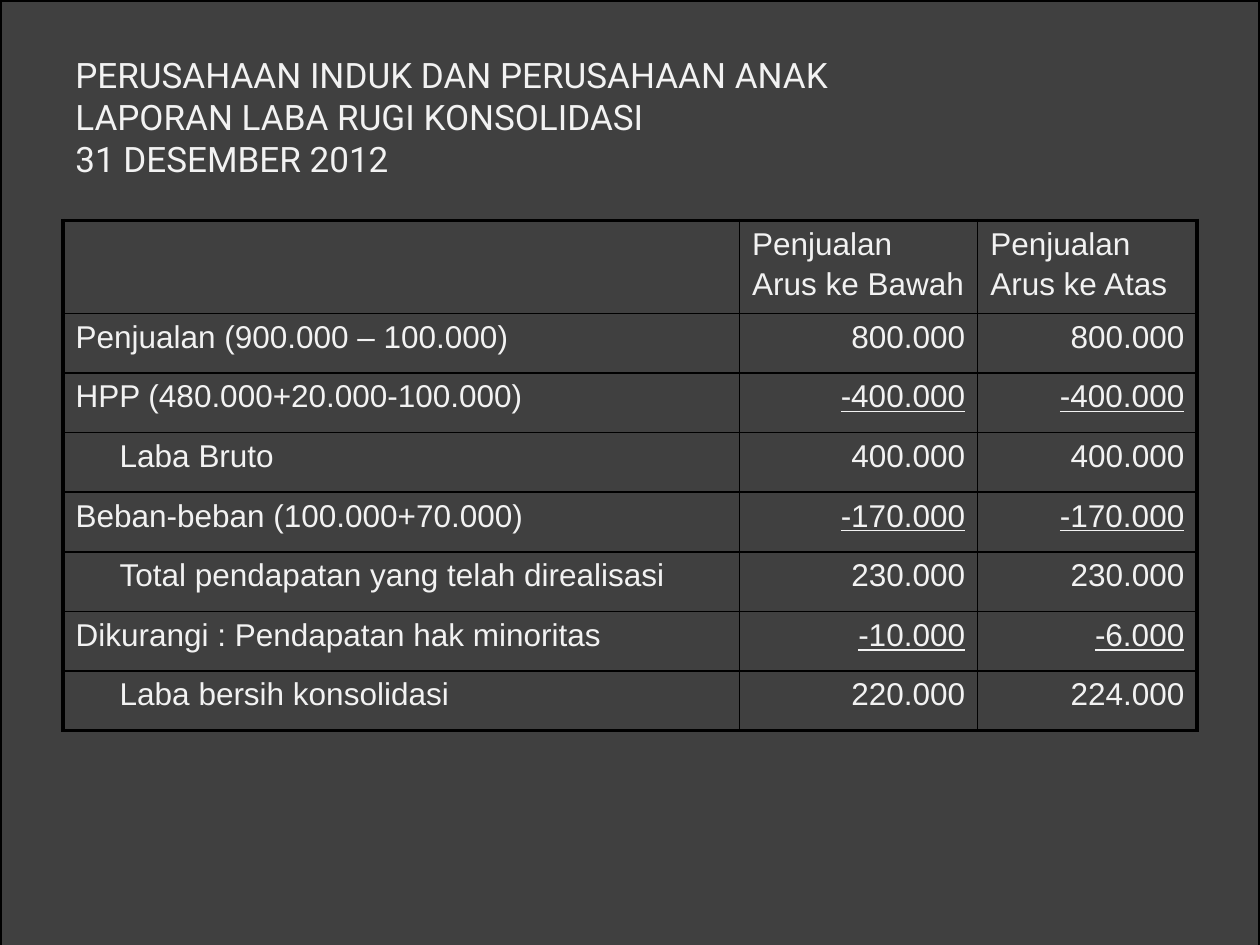
from dataclasses import dataclass

from lxml import etree
from pptx import Presentation
from pptx.dml.color import RGBColor
from pptx.enum.shapes import MSO_SHAPE
from pptx.enum.text import MSO_ANCHOR, PP_ALIGN
from pptx.oxml.ns import qn
from pptx.util import Inches, Pt

RECT = MSO_SHAPE.RECTANGLE
MIDDLE = MSO_ANCHOR.MIDDLE
LEFT, RIGHT = PP_ALIGN.LEFT, PP_ALIGN.RIGHT


@dataclass(frozen=True)
class Theme:
    back: str = "404040"
    ink: str = "F2F2F2"
    line: str = "000000"
    head_font: str = "Roboto"
    body_font: str = "Arial"
    head_size: float = 20
    body_size: float = 18
    gap: float = 2.7
    thin: float = 1
    thick: float = 2.25


@dataclass(frozen=True)
class Entry:
    label: str
    down: str
    up: str
    total: bool = False
    under: bool = False


THEME = Theme()
WIDE, HIGH = Inches(10), Inches(7.5)
EDGE = 0.05
SPAN = 1 - 2 * EDGE
COLS = (5.37, 1.89, 1.74)
HEAD_ROW, BODY_ROW = 0.71, 0.473
INDENT = 0.45

TITLE = "\v".join((
    "PERUSAHAAN INDUK DAN PERUSAHAAN ANAK",
    "LAPORAN LABA RUGI KONSOLIDASI",
    "31 DESEMBER 2012",
))
HEADS = ("", "Penjualan\nArus ke Bawah", "Penjualan\nArus ke Atas")
ENTRIES = (
    Entry("Penjualan (900.000 – 100.000)", "800.000", "800.000"),
    Entry("HPP (480.000+20.000-100.000)", "-400.000", "-400.000", under=True),
    Entry("Laba Bruto", "400.000", "400.000", total=True),
    Entry("Beban-beban (100.000+70.000)", "-170.000", "-170.000", under=True),
    Entry("Total pendapatan yang telah direalisasi", "230.000", "230.000", total=True),
    Entry("Dikurangi : Pendapatan hak minoritas", "-10.000", "-6.000", under=True),
    Entry("Laba bersih konsolidasi", "220.000", "224.000", total=True),
)


def write(frame, text: str, font: str, size: float, align=LEFT, under: bool = False) -> None:
    frame.text = text
    look = {"name": font, "size": Pt(size), "underline": under}
    for spot, para in enumerate(frame.paragraphs):
        para.alignment = align
        if spot:
            para.space_before = Pt(THEME.gap)
        for part in para.runs:
            for key, value in look.items():
                setattr(part.font, key, value)
            part.font.color.rgb = RGBColor.from_string(THEME.ink)


def rule(cell, row: int, col: int, last: int) -> None:
    """Draw cell borders, thick along the outside of the table."""
    props = cell._tc.get_or_add_tcPr()
    sides = {"lnL": col == 0, "lnR": col == len(COLS) - 1,
             "lnT": row == 0, "lnB": row == last}
    for spot, (tag, outer) in enumerate(sides.items()):
        width = THEME.thick if outer else THEME.thin
        line = etree.Element(qn(f"a:{tag}"), w=str(Pt(width)))
        fill = etree.SubElement(line, qn("a:solidFill"))
        etree.SubElement(fill, qn("a:srgbClr"), val=THEME.line)
        props.insert(spot, line)


def draw_back(slide) -> None:
    panel = slide.shapes.add_shape(RECT, 0, 0, WIDE, Inches(7.75))
    panel.shadow.inherit = False
    panel.fill.solid()
    panel.fill.fore_color.rgb = RGBColor.from_string(THEME.back)
    panel.line.color.rgb = RGBColor.from_string(THEME.line)
    panel.line.width = Pt(2)


def draw_title(slide) -> None:
    box = slide.shapes.add_textbox(
        int(WIDE * EDGE), int(HIGH * 0.04), int(WIDE * SPAN), Inches(1.25))
    frame = box.text_frame
    frame.word_wrap = True
    frame.vertical_anchor = MIDDLE
    write(frame, TITLE, THEME.head_font, THEME.head_size)


def draw_table(slide) -> None:
    last = len(ENTRIES)
    tall = HEAD_ROW + BODY_ROW * last
    table = slide.shapes.add_table(
        last + 1, len(COLS), int(WIDE * EDGE), Inches(1.75),
        int(WIDE * SPAN), Inches(tall)).table
    table.first_row = table.horz_banding = False
    for col, width in enumerate(COLS):
        table.columns[col].width = Inches(width)
    for row, entry in enumerate((None, *ENTRIES)):
        table.rows[row].height = Inches(BODY_ROW if entry else HEAD_ROW)
        texts = (entry.label, entry.down, entry.up) if entry else HEADS
        for col, text in enumerate(texts):
            cell = table.cell(row, col)
            cell.fill.background()
            rule(cell, row, col, last)
            value = entry is not None and col > 0
            if entry and entry.total and col == 0:
                cell.margin_left = Inches(INDENT)
            write(cell.text_frame, text, THEME.body_font, THEME.body_size,
                  RIGHT if value else LEFT, value and entry.under)


def main() -> None:
    deck = Presentation()
    deck.slide_width, deck.slide_height = WIDE, HIGH
    slide = deck.slides.add_slide(deck.slide_layouts[6])
    draw_back(slide)
    draw_title(slide)
    draw_table(slide)
    deck.save("out.pptx")


if __name__ == "__main__":
    main()
